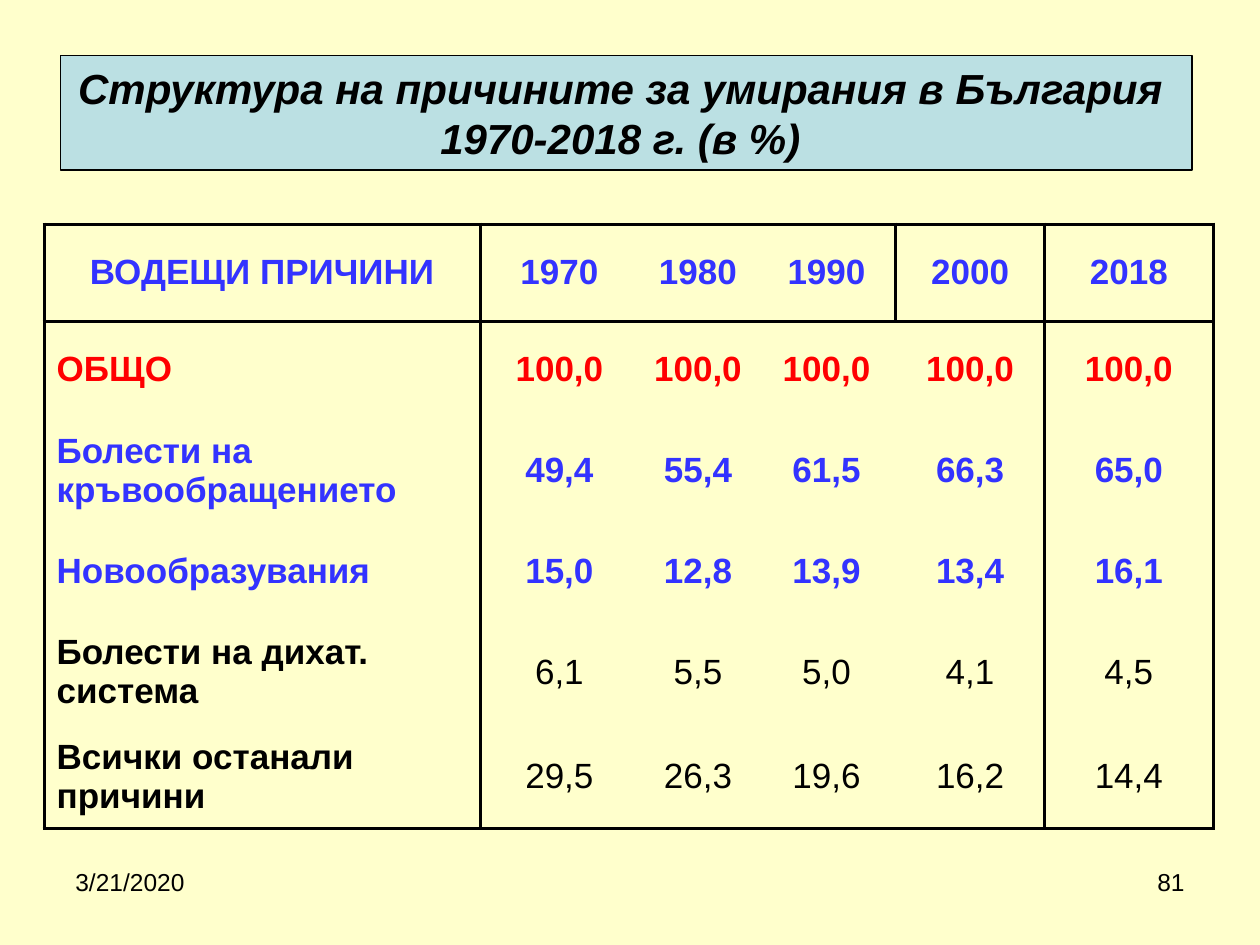
from lxml.etree import SubElement
from pptx import Presentation
from pptx.dml.color import RGBColor
from pptx.enum.text import MSO_ANCHOR, MSO_AUTO_SIZE, PP_ALIGN
from pptx.oxml.ns import qn
from pptx.util import Inches, Pt

CREAM = RGBColor(0xFF, 0xFF, 0xCC)
PALE_BLUE = RGBColor(0xBB, 0xE0, 0xE3)
BLACK = RGBColor(0, 0, 0)
BLUE = RGBColor(0x33, 0x33, 0xFF)
RED = RGBColor(0xFF, 0, 0)

TITLE_LINES = ["Структура на причините за умирания в България ", "1970-2018 г. (в %) "]
HEADER = ["ВОДЕЩИ ПРИЧИНИ", "1970", "1980", "1990", "2000", "2018"]
# cause, colour, bold values, values by year
CAUSES = [
    ("ОБЩО", RED, True, ["100,0"] * 5),
    ("Болести на кръвообращението", BLUE, True, ["49,4", "55,4", "61,5", "66,3", "65,0"]),
    ("Новообразувания", BLUE, True, ["15,0", "12,8", "13,9", "13,4", "16,1"]),
    ("Болести на дихат. система", BLACK, False, ["6,1", "5,5", "5,0", "4,1", "4,5"]),
    ("Всички останали причини", BLACK, False, ["29,5", "26,3", "19,6", "16,2", "14,4"]),
]
FOOTERS = [(0.5, "3/21/2020", PP_ALIGN.LEFT), (7.17, "81", PP_ALIGN.RIGHT)]
COLUMN_WIDTHS = [3.46, 1.26, 0.94, 1.1, 1.18, 1.34]
ROW_HEIGHTS = [0.77, 0.77, 0.83, 0.77, 0.83, 0.83]

# Ruled grid lines, numbered from the left and top edges of the table
HEADER_VERTICALS = {0, 1, 4, 5, 6}
BODY_VERTICALS = {0, 1, 5, 6}
HORIZONTALS = {0, 1, len(ROW_HEIGHTS)}


def style(paragraph, size, color, align, bold=False, italic=False):
    paragraph.alignment = align
    font = paragraph.font
    font.name, font.size = "Arial", Pt(size)
    font.bold, font.italic = bold, italic
    font.color.rgb = color


def rule_cell(cell, row, column):
    verticals = BODY_VERTICALS if row else HEADER_VERTICALS
    ruled_sides = {
        "L": column in verticals,
        "R": column + 1 in verticals,
        "T": row in HORIZONTALS,
        "B": row + 1 in HORIZONTALS,
    }
    properties = cell._tc.get_or_add_tcPr()
    for side, ruled in ruled_sides.items():
        line = SubElement(properties, qn(f"a:ln{side}"), w=str(Pt(2)))
        if ruled:
            fill = SubElement(line, qn("a:solidFill"))
            SubElement(fill, qn("a:srgbClr"), val=str(BLACK))
        else:
            SubElement(line, qn("a:noFill"))


def add_title(slide):
    title = slide.shapes.title
    title.left, title.top = Inches(0.48), Inches(0.44)
    title.width, title.height = Inches(8.98), Inches(0.91)
    title.fill.solid()
    title.fill.fore_color.rgb = PALE_BLUE
    title.line.color.rgb = BLACK
    title.line.width = Pt(0.75)
    frame = title.text_frame
    frame.text = "\n".join(TITLE_LINES)
    frame.word_wrap = False
    frame.auto_size = MSO_AUTO_SIZE.SHAPE_TO_FIT_TEXT
    frame.vertical_anchor = MSO_ANCHOR.MIDDLE
    for paragraph in frame.paragraphs:
        style(paragraph, 24, BLACK, PP_ALIGN.CENTER, bold=True, italic=True)


def add_causes_table(slide):
    rows = [(HEADER, BLUE, True)]
    rows += [([cause, *values], color, bold) for cause, color, bold, values in CAUSES]
    table = slide.shapes.add_table(
        len(rows), len(HEADER), Inches(0.35), Inches(1.78),
        Inches(sum(COLUMN_WIDTHS)), Inches(sum(ROW_HEIGHTS)),
    ).table
    table.first_row = table.horz_banding = False
    for column, width in zip(table.columns, COLUMN_WIDTHS):
        column.width = Inches(width)
    for row, height in zip(table.rows, ROW_HEIGHTS):
        row.height = Inches(height)

    for r, (texts, color, bold) in enumerate(rows):
        for c, text in enumerate(texts):
            cell = table.cell(r, c)
            cell.text = text
            cell.vertical_anchor = MSO_ANCHOR.MIDDLE
            is_cause = r > 0 and c == 0
            align = PP_ALIGN.LEFT if is_cause else PP_ALIGN.CENTER
            style(cell.text_frame.paragraphs[0], 20, color, align, bold or is_cause)
            rule_cell(cell, r, c)
            cell.fill.background()


def add_footers(slide):
    for left, text, align in FOOTERS:
        frame = slide.shapes.add_textbox(
            Inches(left), Inches(6.83), Inches(2.33), Inches(0.52)).text_frame
        frame.word_wrap = True
        frame.text = text
        style(frame.paragraphs[0], 14, BLACK, align)


def main():
    presentation = Presentation()
    presentation.slide_width, presentation.slide_height = Inches(10), Inches(7.5)
    slide = presentation.slides.add_slide(presentation.slide_layouts[5])
    slide.background.fill.solid()
    slide.background.fill.fore_color.rgb = CREAM
    add_title(slide)
    add_causes_table(slide)
    add_footers(slide)
    presentation.save("out.pptx")


if __name__ == "__main__":
    main()
